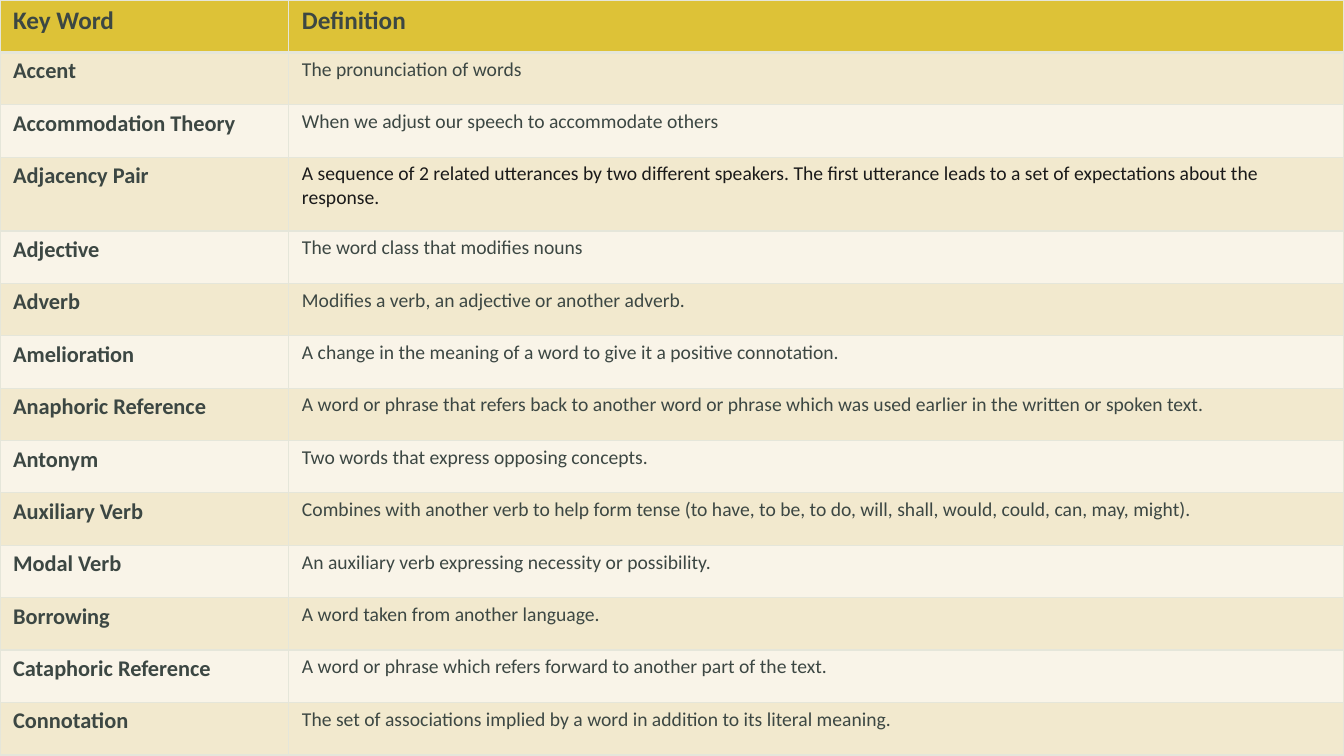
import pptx
import pptx.dml.color
import pptx.oxml
import pptx.oxml.ns
import pptx.util
from pptx.util import Cm

GRID, INK, BLACK = "E5E6DA", "3C4743", "1A1A1A"
HEADER_FILL, BAND_FILLS = "DDC237", ("F9F4E8", "F2E9CE")
COLUMN_WIDTHS = (7.28, 26.59)
ROW_HEIGHT, TALL_ROW_HEIGHT = 1.32, 1.86
TWO_LINE_TERM = "Adjacency Pair"

glossary = [
    ("Key Word", "Definition"),
    ("Accent", "The pronunciation of words"),
    ("Accommodation Theory", "When we adjust our speech to accommodate others"),
    (TWO_LINE_TERM, "A sequence of 2 related utterances by two different speakers. "
     "The first utterance leads to a set of expectations about the response."),
    ("Adjective", "The word class that modifies nouns"),
    ("Adverb", "Modifies a verb, an adjective or another adverb."),
    ("Amelioration", "A change in the meaning of a word to give it a positive connotation."),
    ("Anaphoric Reference", "A word or phrase that refers back to another word or phrase "
     "which was used earlier in the written or spoken text."),
    ("Antonym", "Two words that express opposing concepts."),
    ("Auxiliary Verb", "Combines with another verb to help form tense "
     "(to have, to be, to do, will, shall, would, could, can, may, might)."),
    ("Modal Verb", "An auxiliary verb expressing necessity or possibility."),
    ("Borrowing", "A word taken from another language."),
    ("Cataphoric Reference", "A word or phrase which refers forward to another part of the text."),
    ("Connotation", "The set of associations implied by a word in addition to its literal meaning."),
]


def paint(fill, color):
    fill.solid()
    fill.fore_color.rgb = pptx.dml.color.RGBColor.from_string(color)


def add_borders(cell, widths):
    """Draw the cell's edges; widths maps L, R, T and B to points."""
    properties = cell._tc.get_or_add_tcPr()
    for side, width in widths.items():
        properties.append(pptx.oxml.parse_xml(
            f'<a:ln{side} {pptx.oxml.ns.nsdecls("a")} w="{pptx.util.Pt(width)}">'
            f'<a:solidFill><a:srgbClr val="{GRID}"/></a:solidFill></a:ln{side}>'))


deck = pptx.Presentation()
deck.slide_width, deck.slide_height = Cm(33.87), Cm(19.05)
page = deck.slides.add_slide(deck.slide_layouts[6])
paint(page.background.fill, GRID)

table = page.shapes.add_table(
    len(glossary), 2, Cm(0), Cm(0), deck.slide_width, deck.slide_height).table
for column, width in zip(table.columns, COLUMN_WIDTHS):
    column.width = Cm(width)

for row_index, entry in enumerate(glossary):
    is_header = row_index == 0
    is_tall = entry[0] == TWO_LINE_TERM
    table.rows[row_index].height = Cm(TALL_ROW_HEIGHT if is_tall else ROW_HEIGHT)
    for column_index, text in enumerate(entry):
        is_definition = column_index == 1 and not is_header
        cell = table.cell(row_index, column_index)
        margins = {"margin_left": 0.33, "margin_right": 0.33,
                   "margin_top": 0.13, "margin_bottom": 0.13}
        for name, value in margins.items():
            setattr(cell, name, Cm(value))
        add_borders(cell, {"L": 1, "R": 1, "T": 1, "B": 3 if is_header else 1})
        paint(cell.fill, HEADER_FILL if is_header else BAND_FILLS[row_index % 2])

        span = cell.text_frame.paragraphs[0].add_run()
        span.text = text
        size = 18 if is_header else 14 if is_definition else 16
        text_format = {"name": "Calibri", "size": pptx.util.Pt(size), "bold": not is_definition}
        for name, value in text_format.items():
            setattr(span.font, name, value)
        paint(span.font.fill, BLACK if is_tall and is_definition else INK)

deck.save("out.pptx")
